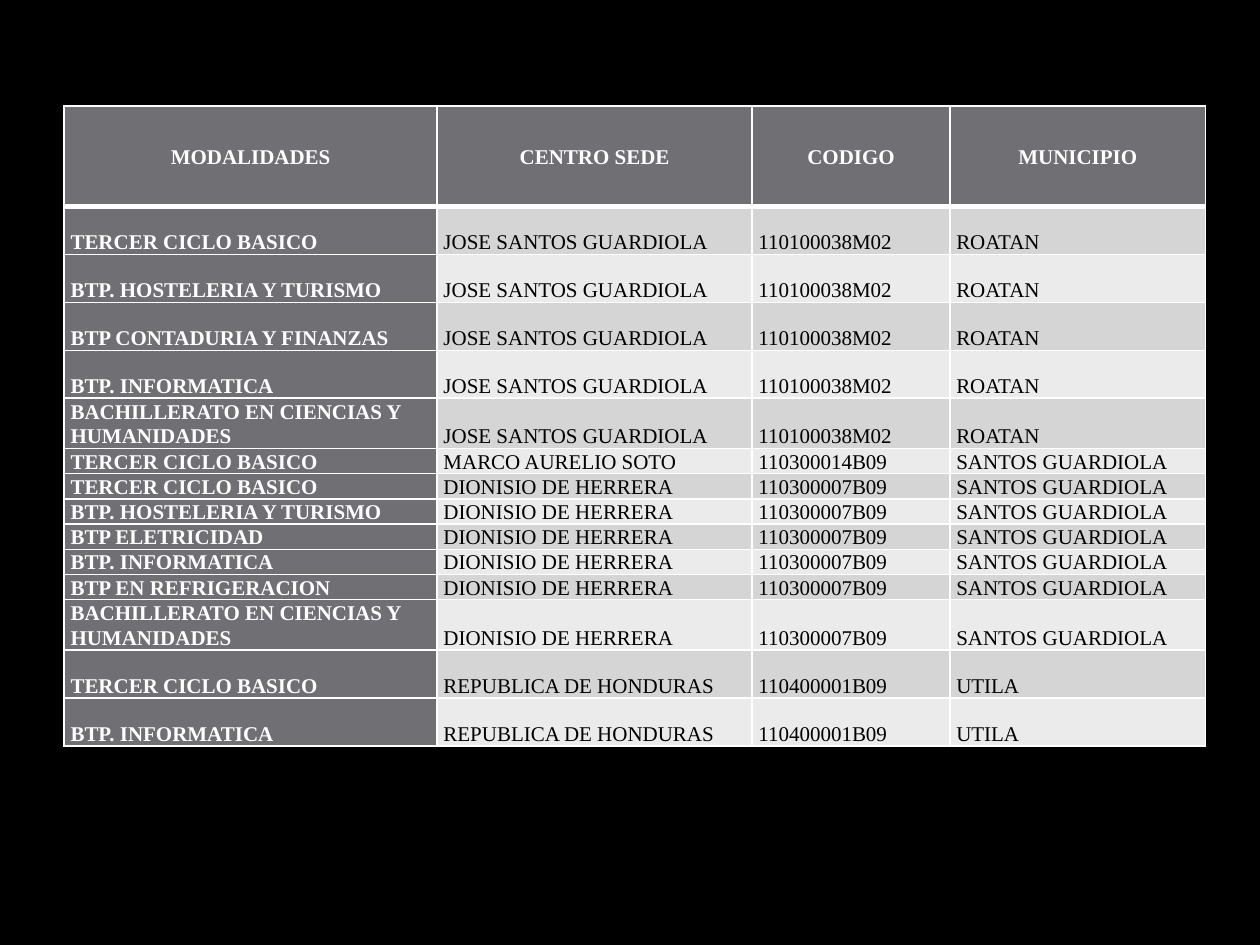
"""Build a slide with a table of study programmes, centres, codes and municipalities."""
import dataclasses

import lxml.etree
import pptx
import pptx.dml.color
import pptx.enum.text
import pptx.oxml.ns
import pptx.util

Inches = pptx.util.Inches
qn = pptx.oxml.ns.qn


@dataclasses.dataclass(frozen=True)
class Theme:
    """Colours, type and line sizes."""
    background: str = "000000"
    accent: str = "6F6F74"
    bands: tuple = ("D5D5D6", "EBEBEB")
    light: str = "FFFFFF"
    dark: str = "000000"
    font: str = "Times New Roman"
    size: float = 12
    spacing: float = 1.07
    thin: float = 1
    thick: float = 3


HEADINGS = ("MODALIDADES", "CENTRO SEDE", "CODIGO", "MUNICIPIO")
COLUMN_WIDTHS = (2.96, 2.5, 1.57, 2.03)
HEADER_HEIGHT, TWO_LINE_HEIGHT = 0.8, 0.4
BASIC = "TERCER CICLO BASICO"
TOURISM = "BTP. HOSTELERIA Y TURISMO"
COMPUTING = "BTP. INFORMATICA"
HUMANITIES = "BACHILLERATO EN CIENCIAS Y HUMANIDADES"
CENTRES = (
    (("JOSE SANTOS GUARDIOLA", "110100038M02", "ROATAN"), 0.38,
     (BASIC, TOURISM, "BTP CONTADURIA Y FINANZAS", COMPUTING, HUMANITIES)),
    (("MARCO AURELIO SOTO", "110300014B09", "SANTOS GUARDIOLA"), 0.2, (BASIC,)),
    (("DIONISIO DE HERRERA", "110300007B09", "SANTOS GUARDIOLA"), 0.2,
     (BASIC, TOURISM, "BTP ELETRICIDAD", COMPUTING, "BTP EN REFRIGERACION", HUMANITIES)),
    (("REPUBLICA DE HONDURAS", "110400001B09", "UTILA"), 0.38, (BASIC, COMPUTING)),
)


def apply(target, values):
    """Set each named attribute of the target."""
    for name, value in values.items():
        setattr(target, name, value)


class Composer:
    """Holds the theme and the current slide."""

    def __init__(self, deck, theme):
        """Add a blank page with the theme background."""
        self.theme = theme
        self.page = deck.slides.add_slide(deck.slide_layouts[6])
        self.paint(self.page.background.fill, theme.background)

    def paint(self, fill, colour):
        """Give a fill one solid colour."""
        fill.solid()
        fill.fore_color.rgb = pptx.dml.color.RGBColor.from_string(colour)

    def border(self, cell, side, points):
        """Draw one side of a cell."""
        line = lxml.etree.SubElement(cell._tc.get_or_add_tcPr(), qn(f"a:ln{side}"),
                                     w=str(int(pptx.util.Pt(points))))
        solid = lxml.etree.SubElement(line, qn("a:solidFill"))
        lxml.etree.SubElement(solid, qn("a:srgbClr"), val=self.theme.light)

    def cell(self, cell, text, row, column):
        """Write and format one cell according to its place."""
        theme = self.theme
        header = row == 0
        emphasis = header or column == 0
        thick_side = {0: "B", 1: "T"}.get(row)
        for side in "LRTB":
            self.border(cell, side, theme.thick if side == thick_side else theme.thin)
        self.paint(cell.fill, theme.accent if emphasis else theme.bands[(row - 1) % 2])
        anchors = pptx.enum.text.MSO_ANCHOR
        apply(cell, {
            "margin_left": Inches(0.05), "margin_right": Inches(0.05),
            "margin_top": 0, "margin_bottom": 0,
            "vertical_anchor": anchors.MIDDLE if header else anchors.BOTTOM,
        })
        para = cell.text_frame.paragraphs[0]
        alignments = pptx.enum.text.PP_ALIGN
        apply(para, {
            "line_spacing": theme.spacing,
            "alignment": alignments.CENTER if header else alignments.LEFT,
        })
        span = para.add_run()
        span.text = text
        apply(span.font, {"name": theme.font, "size": pptx.util.Pt(theme.size),
                          "bold": emphasis})
        self.paint(span.font.fill, theme.light if emphasis else theme.dark)

    def table(self, left, top, widths, rows):
        """Add a table from pairs of row height and cell texts."""
        height = sum(row_height for row_height, _ in rows)
        frame = self.page.shapes.add_table(len(rows), len(widths), Inches(left), Inches(top),
                                           Inches(sum(widths)), Inches(height))
        table = frame.table
        for column, width in zip(table.columns, widths):
            column.width = Inches(width)
        for row, (row_height, texts) in enumerate(rows):
            table.rows[row].height = Inches(row_height)
            for column, text in enumerate(texts):
                self.cell(table.cell(row, column), text, row, column)


def main():
    """Build and save the deck."""
    deck = pptx.Presentation()
    apply(deck, {"slide_width": Inches(10), "slide_height": Inches(7.5)})
    rows = [(HEADER_HEIGHT, HEADINGS)]
    for details, height, programmes in CENTRES:
        for programme in programmes:
            row_height = TWO_LINE_HEIGHT if programme == HUMANITIES else height
            rows.append((row_height, (programme, *details)))
    Composer(deck, Theme()).table(0.51, 0.84, COLUMN_WIDTHS, rows)
    deck.save("out.pptx")


if __name__ == "__main__":
    main()
